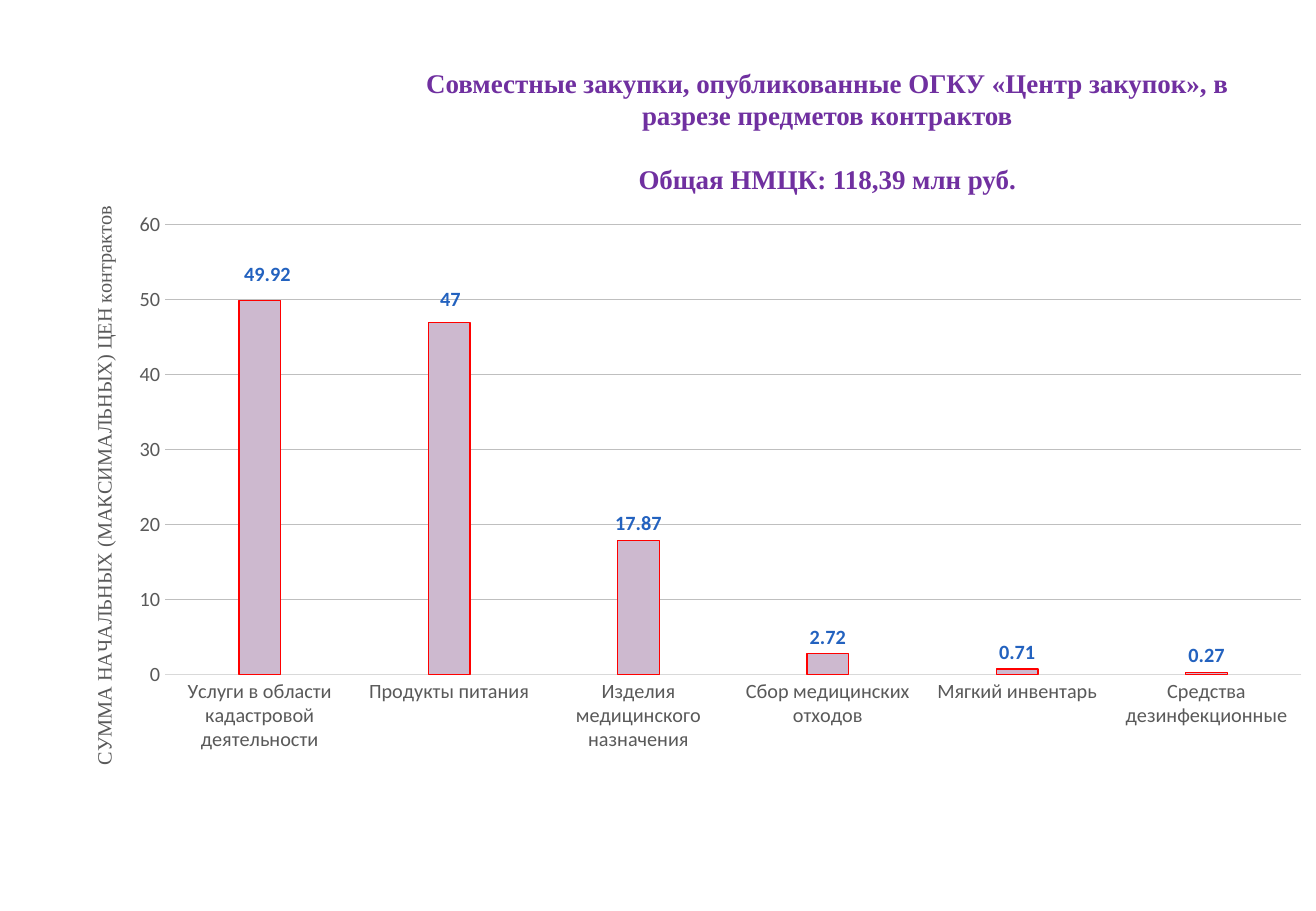
from dataclasses import dataclass

from pptx import Presentation
from pptx.chart.data import CategoryChartData
from pptx.dml.color import RGBColor
from pptx.enum.chart import XL_CHART_TYPE, XL_LABEL_POSITION, XL_TICK_MARK
from pptx.enum.text import MSO_ANCHOR, PP_ALIGN
from pptx.oxml import parse_xml
from pptx.oxml.ns import nsdecls
from pptx.util import Cm, Pt

COLUMN_CLUSTERED = XL_CHART_TYPE.COLUMN_CLUSTERED
OUTSIDE_END = XL_LABEL_POSITION.OUTSIDE_END
NO_TICK = XL_TICK_MARK.NONE
MIDDLE = MSO_ANCHOR.MIDDLE
CENTER = PP_ALIGN.CENTER


@dataclass(frozen=True)
class Theme:
    title_font: str = "Times New Roman"
    chart_font: str = "Calibri"
    title_size: int = 16
    chart_size: int = 12
    line_width: float = 0.75
    title: str = "7030A0"
    axis_text: str = "595959"
    axis_line: str = "D9D9D9"
    grid: str = "BFBFBF"
    bar: str = "CDB9CF"
    bar_line: str = "FF0000"
    label: str = "2362BF"


THEME = Theme()

TITLE_LINES = [
    "Совместные закупки, опубликованные ОГКУ «Центр закупок», в разрезе предметов контрактов",
    "Общая НМЦК: 118,39 млн руб.",
]
AXIS_TITLE = "СУММА НАЧАЛЬНЫХ (МАКСИМАЛЬНЫХ) ЦЕН контрактов"
PURCHASES = {
    "Услуги в области кадастровой деятельности": 49.92,
    "Продукты питания": 46.91,
    "Изделия медицинского назначения": 17.87,
    "Сбор медицинских отходов": 2.72,
    "Мягкий инвентарь": 0.71,
    "Средства дезинфекционные": 0.27,
}
# Point index: number format and label shift as a share of the chart
SPECIAL_LABELS = {0: ("0.00", 0.006, -0.01), 1: ("0", 0.001, -0.008)}


def style_font(font, name, size, color, bold=False):
    font.name = name
    font.size = Pt(size)
    font.bold = bold
    font.color.rgb = RGBColor.from_string(color)


def style_line(line, color):
    line.color.rgb = RGBColor.from_string(color)
    line.width = Pt(THEME.line_width)


def set_layout(parent, index, x, y, size=None):
    """Place a chart part by shares of the chart's width and height."""
    for old_layout in parent.xpath("c:layout"):
        parent.remove(old_layout)
    values = []
    if size:
        values.append(("layoutTarget", "inner"))
    if size or parent.tag.endswith("}title"):
        values += [("xMode", "edge"), ("yMode", "edge")]
    values += [("x", x), ("y", y)]
    if size:
        values += [("w", size[0]), ("h", size[1])]
    children = "".join(f'<c:{name} val="{value}"/>' for name, value in values)
    parent.insert(index, parse_xml(
        f'<c:layout {nsdecls("c")}><c:manualLayout>{children}</c:manualLayout></c:layout>'))


def add_title(slide):
    box = slide.shapes.add_textbox(Cm(7.95), Cm(1.73), Cm(18.69), Cm(2.01))
    frame = box.text_frame
    frame.word_wrap = True
    frame.vertical_anchor = MIDDLE
    frame.text = "\n".join(TITLE_LINES)
    for paragraph in frame.paragraphs:
        paragraph.alignment = CENTER
        style_font(paragraph.runs[0].font, THEME.title_font, THEME.title_size,
                   THEME.title, bold=True)
    frame.paragraphs[-1].space_before = Pt(19)


def style_axes(chart):
    for axis in (chart.category_axis, chart.value_axis):
        axis.major_tick_mark = axis.minor_tick_mark = NO_TICK
        style_font(axis.tick_labels.font, THEME.chart_font, THEME.chart_size, THEME.axis_text)
    style_line(chart.category_axis.format.line, THEME.axis_line)

    value_axis = chart.value_axis
    value_axis.minimum_scale, value_axis.maximum_scale = 0, 60
    value_axis.major_unit = 10
    value_axis.tick_labels.number_format = "#,##0"
    value_axis.tick_labels.number_format_is_linked = False
    value_axis.format.line.fill.background()
    style_line(value_axis.major_gridlines.format.line, THEME.grid)

    frame = value_axis.axis_title.text_frame
    frame.text = AXIS_TITLE
    style_font(frame.paragraphs[0].runs[0].font, THEME.title_font, THEME.chart_size,
               THEME.axis_text)
    title = chart._chartSpace.xpath("//c:valAx/c:title")[0]
    body = title.xpath(".//a:bodyPr")[0]
    body.set("rot", "-5400000")
    body.set("vert", "horz")
    set_layout(title, 1, 0.055, 0.18)


def style_bars(chart):
    plot = chart.plots[0]
    plot.gap_width, plot.overlap = 355, -70
    plot.vary_by_categories = False
    series = plot.series[0]
    series.format.fill.solid()
    series.format.fill.fore_color.rgb = RGBColor.from_string(THEME.bar)
    style_line(series.format.line, THEME.bar_line)

    labels = series.data_labels
    labels.show_value = True
    labels.number_format = "0.00"
    labels.number_format_is_linked = False
    labels.position = OUTSIDE_END
    style_font(labels.font, THEME.chart_font, THEME.chart_size, THEME.label, bold=True)

    # Shifted labels with their own number format
    for index, (number_format, shift_x, shift_y) in SPECIAL_LABELS.items():
        label = series.points[index].data_label
        label.position = OUTSIDE_END
        style_font(label.font, THEME.chart_font, THEME.chart_size, THEME.label, bold=True)
        element = chart._chartSpace.xpath(f"//c:dLbl[c:idx/@val='{index}']")[0]
        set_layout(element, 1, shift_x, shift_y)
        element.insert(2, parse_xml(
            f'<c:numFmt {nsdecls("c")} formatCode="{number_format}" sourceLinked="0"/>'))


def add_purchase_chart(slide):
    data = CategoryChartData()
    data.categories = list(PURCHASES)
    data.add_series("Series 1", list(PURCHASES.values()))
    frame = slide.shapes.add_chart(
        COLUMN_CLUSTERED, Cm(0.36), Cm(0.99), Cm(26.87), Cm(18.01), data)
    chart = frame.chart
    chart.has_title = False
    chart.has_legend = False
    style_axes(chart)
    style_bars(chart)
    plot_area = chart._chartSpace.xpath("//c:plotArea")[0]
    set_layout(plot_area, 0, 0.115, 0.206, size=(0.884, 0.522))


def main():
    presentation = Presentation()
    presentation.slide_width, presentation.slide_height = Cm(27.51), Cm(19.05)
    slide = presentation.slides.add_slide(presentation.slide_layouts[6])
    add_purchase_chart(slide)
    add_title(slide)
    presentation.save("out.pptx")


if __name__ == "__main__":
    main()
